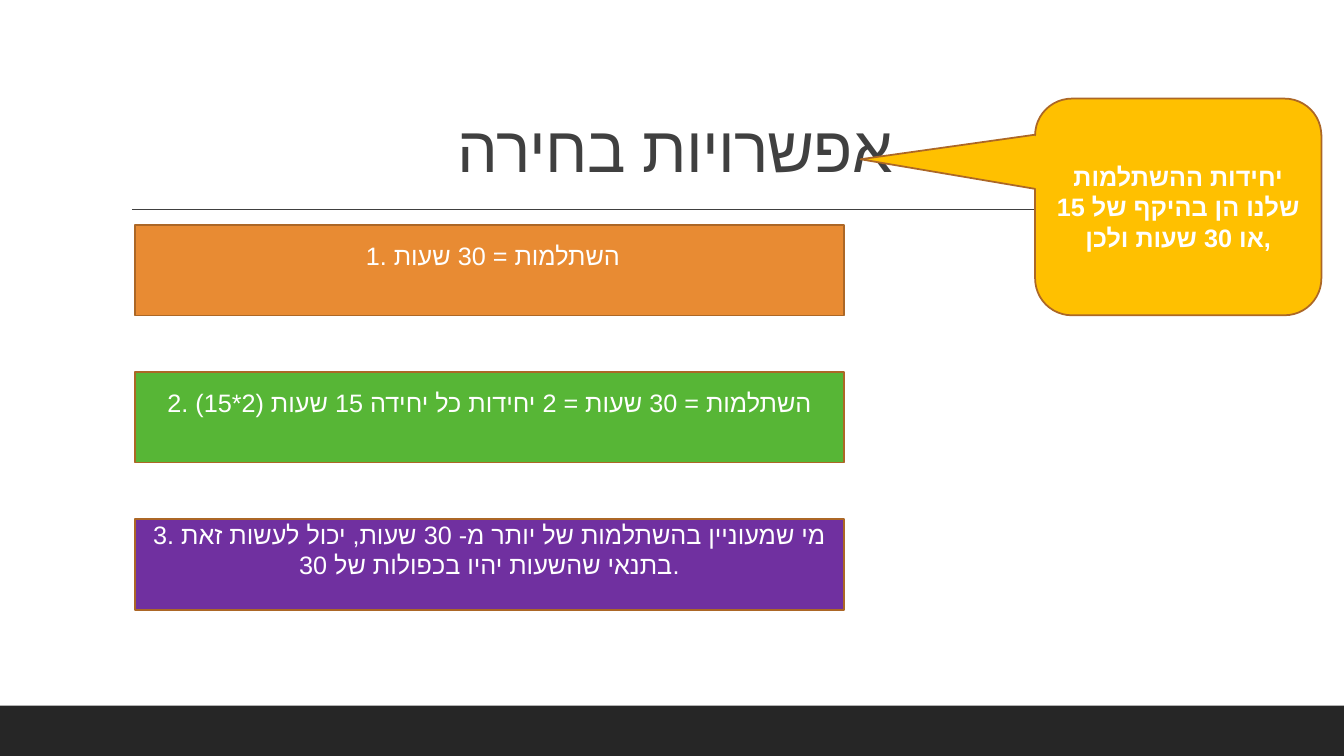
from lxml.etree import SubElement
from pptx import Presentation
from pptx.dml.color import RGBColor
from pptx.enum.shapes import MSO_CONNECTOR as Link, MSO_SHAPE as Kind
from pptx.enum.text import MSO_ANCHOR as Anchor, MSO_AUTO_SIZE as Fit, PP_ALIGN as Align
from pptx.oxml.ns import qn
from pptx.util import Pt

TITLE = "אפשרויות בחירה"
NOTE = "יחידות ההשתלמות שלנו הן בהיקף של 15 או 30 שעות ולכן,"
CHOICES = [
    (" 1. השתלמות = 30 שעות", "E88B33"),
    ("2. השתלמות = 30 שעות = 2 יחידות כל יחידה 15 שעות (2*15)", "57B636"),
    ("3. מי שמעוניין בהשתלמות של יותר מ- 30 שעות, יכול לעשות זאת "
     "בתנאי שהשעות יהיו בכפולות של 30.", "7030A0"),
]
THEME = {
    "dark": "404040", "foot": "262626", "edge": "AC6726",
    "note": "FFC000", "light": "FFFFFF",
    "head": {"name": "Cambria", "size": Pt(46), "bold": False},
    "body": {"name": "Arial", "size": Pt(18), "bold": False},
    "loud": {"name": "Arial", "size": Pt(18), "bold": True},
    "hebrew": "Arial",
}
WIDE, HIGH = 960, 540
TITLE_BOX = (86.4, 22.3, 792, 114.5)
FOOT_BOX = (0, 504, WIDE, 36)
NOTE_BOX = (739.4, 70.4, 204.5, 154.8)
NOTE_TIP = (-1.11, -0.22, 0.17)
RULE_LEFT, RULE_RIGHT, RULE_TOP = 94.3, 879.1, 149.8
LEFT, TOP, WIDTH, HEIGHT, STEP = 96.5, 160.6, 506.2, 64.8, 105.1
LIFT = 25  # bottom inset that raises the text of a choice


def points(box):
    return [Pt(n) for n in box]


def color(key):
    return RGBColor.from_string(THEME.get(key, key))


def write(shape, text, style, ink, **frame):
    """Fill a shape with one centred paragraph and return its run."""
    body = shape.text_frame
    form = {"word_wrap": True, "auto_size": Fit.NONE,
            "vertical_anchor": Anchor.MIDDLE, **frame}
    for name, value in form.items():
        setattr(body, name, value)
    para = body.paragraphs[0]
    para.alignment = Align.CENTER
    run = para.add_run()
    run.text = text
    for name, value in THEME[style].items():
        setattr(run.font, name, value)
    run.font.color.rgb = color(ink)
    SubElement(run._r.get_or_add_rPr(), qn("a:cs"), typeface=THEME["hebrew"])
    return run


def block(slide, kind, box, fill, edge=None):
    shape = slide.shapes.add_shape(kind, *points(box))
    shape.shadow.inherit = False
    shape.fill.solid()
    shape.fill.fore_color.rgb = color(fill)
    if edge:
        shape.line.color.rgb = color(edge)
        shape.line.width = Pt(1.25)
    else:
        shape.line.fill.background()
    return shape


def add_rule(slide):
    rule = slide.shapes.add_connector(
        Link.STRAIGHT, *points((RULE_LEFT, RULE_TOP, RULE_RIGHT, RULE_TOP)))
    rule.line.color.rgb = color("dark")
    rule.line.width = Pt(1)
    SubElement(rule._element.spPr, qn("a:effectLst"))


def add_title(slide):
    title = slide.shapes.title
    for name, value in zip(("left", "top", "width", "height"), points(TITLE_BOX)):
        setattr(title, name, value)
    run = write(title, TITLE, "head", "dark", vertical_anchor=Anchor.BOTTOM)
    run._r.get_or_add_rPr().set("spc", "-50")
    title.text_frame.paragraphs[0].line_spacing = 0.9


def add_note(slide):
    note = block(slide, Kind.ROUNDED_RECTANGULAR_CALLOUT, NOTE_BOX, "note", "edge")
    for i, value in enumerate(NOTE_TIP):
        note.adjustments[i] = value
    write(note, NOTE, "loud", "light")


def main():
    deck = Presentation()
    deck.slide_width, deck.slide_height = points((WIDE, HIGH))
    slide = deck.slides.add_slide(deck.slide_layouts[5])
    block(slide, Kind.RECTANGLE, FOOT_BOX, "foot")
    add_rule(slide)
    add_title(slide)
    for i, (text, fill) in enumerate(CHOICES):
        box = (LEFT, TOP + i * STEP, WIDTH, HEIGHT)
        shape = block(slide, Kind.RECTANGLE, box, fill, "edge")
        write(shape, text, "body", "light", margin_bottom=Pt(LIFT))
    add_note(slide)
    deck.save("out.pptx")


if __name__ == "__main__":
    main()
